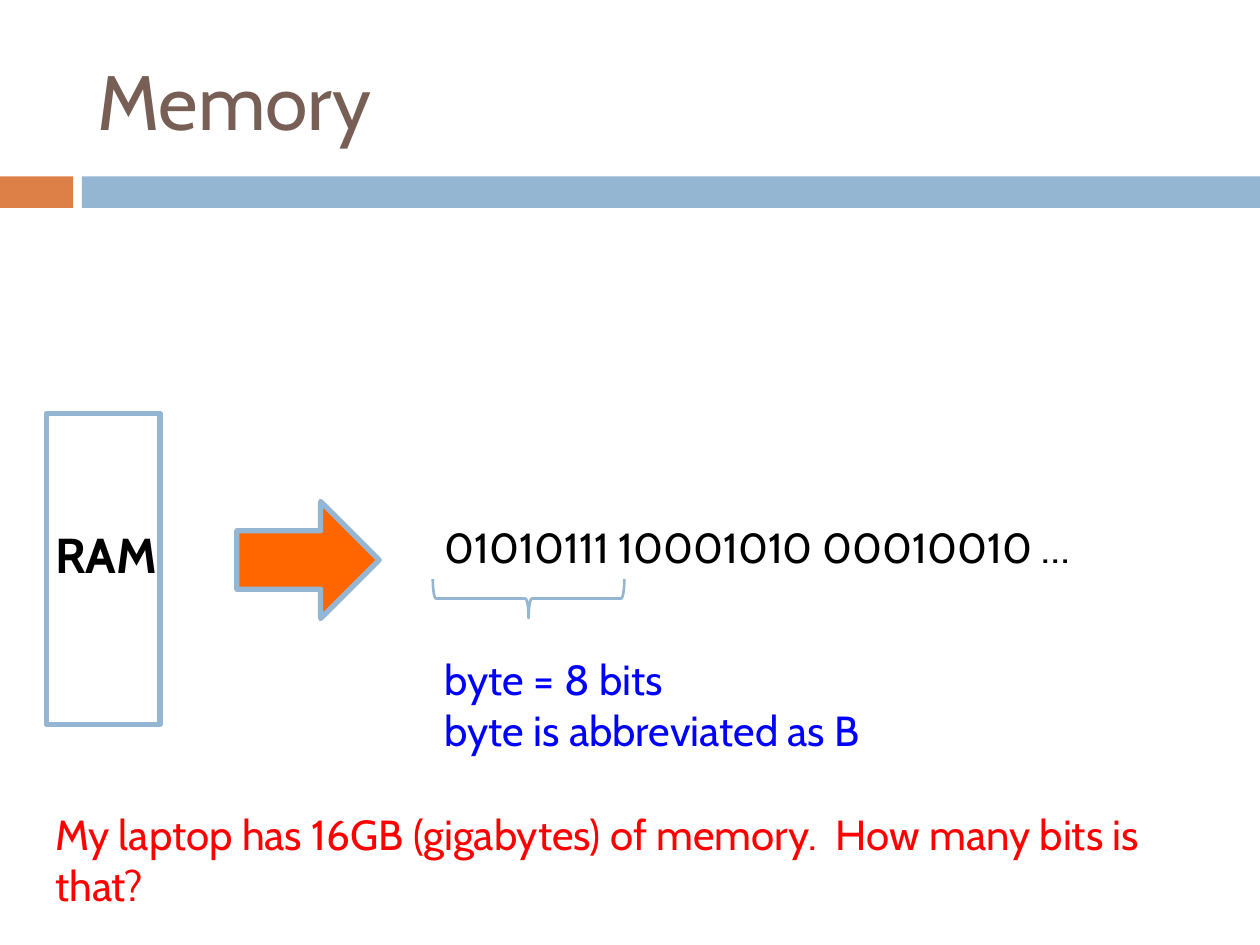
from pptx import Presentation
from pptx import util as u
from pptx.dml.color import RGBColor
from pptx.enum import shapes, text

presentation = Presentation()
presentation.slide_width, presentation.slide_height = u.Inches(10), u.Inches(7.5)
slide = presentation.slides.add_slide(presentation.slide_layouts[5])
PRESET = shapes.MSO_SHAPE
BLUE, ORANGE = "94B6D2", "DD8047"


def add_shape(preset, box, fill=None, line=None, width=3):
    shape = slide.shapes.add_shape(preset, *map(u.Inches, box))
    shape.shadow.inherit = False
    if fill:
        shape.fill.solid()
        shape.fill.fore_color.rgb = RGBColor.from_string(fill)
    else:
        shape.fill.background()
    if line:
        shape.line.color.rgb = RGBColor.from_string(line)
        shape.line.width = u.Pt(width)
    else:
        shape.line.fill.background()
    return shape


def write(shape, words, size, color, bold=False, wrap=False):
    frame = shape.text_frame
    frame.text = words
    frame.word_wrap = wrap
    for paragraph in frame.paragraphs:
        paragraph.alignment = text.PP_ALIGN.LEFT
        font = paragraph.runs[0].font
        font.name, font.size, font.bold = "Cabin", u.Pt(size), bold
        font.color.rgb = RGBColor.from_string(color)


# Title
title = slide.shapes.title
title.left, title.top, title.width, title.height = map(u.Inches, (0.67, 0.25, 8.92, 1.08))
write(title, "Memory", 44, "775F55", wrap=True)
title.text_frame.vertical_anchor = text.MSO_ANCHOR.MIDDLE

# Band under the title
add_shape(PRESET.RECTANGLE, (0, 1.4, 0.58, 0.25), fill=ORANGE)
add_shape(PRESET.RECTANGLE, (0.65, 1.4, 9.35, 0.25), fill=BLUE)

# Memory block, arrow and the brace under the first byte
add_shape(PRESET.RECTANGLE, (0.37, 3.28, 0.9, 2.47), line=BLUE)
add_shape(PRESET.RIGHT_ARROW, (1.88, 3.98, 1.13, 0.93), fill="FF6600", line=BLUE)
brace = add_shape(PRESET.LEFT_BRACE, (4.04, 3.99, 0.31, 1.52), line=BLUE, width=1.5)
brace.rotation = 270

# Labels: box, words, size, colour, bold, wrap
left, middle = 0.34, 3.43
labels = [
    ((left, 4.11, 1.02, 0.57), "RAM", 28, "000000", True, False),
    ((middle, 4.09, 5.27, 0.5), "01010111 10001010 00010010 …", 24, "000000", False, False),
    ((middle, 5.14, 3.51, 0.91), "byte = 8 bits\nbyte is abbreviated as B", 24, "0000FF", False, False),
    ((left, 6.37, 9.4, 0.5), "My laptop has 16GB (gigabytes) of memory.  How many bits is that?",
     24, "FF0000", False, True),
]
for box, *style in labels:
    write(slide.shapes.add_textbox(*map(u.Inches, box)), *style)

presentation.save("out.pptx")
